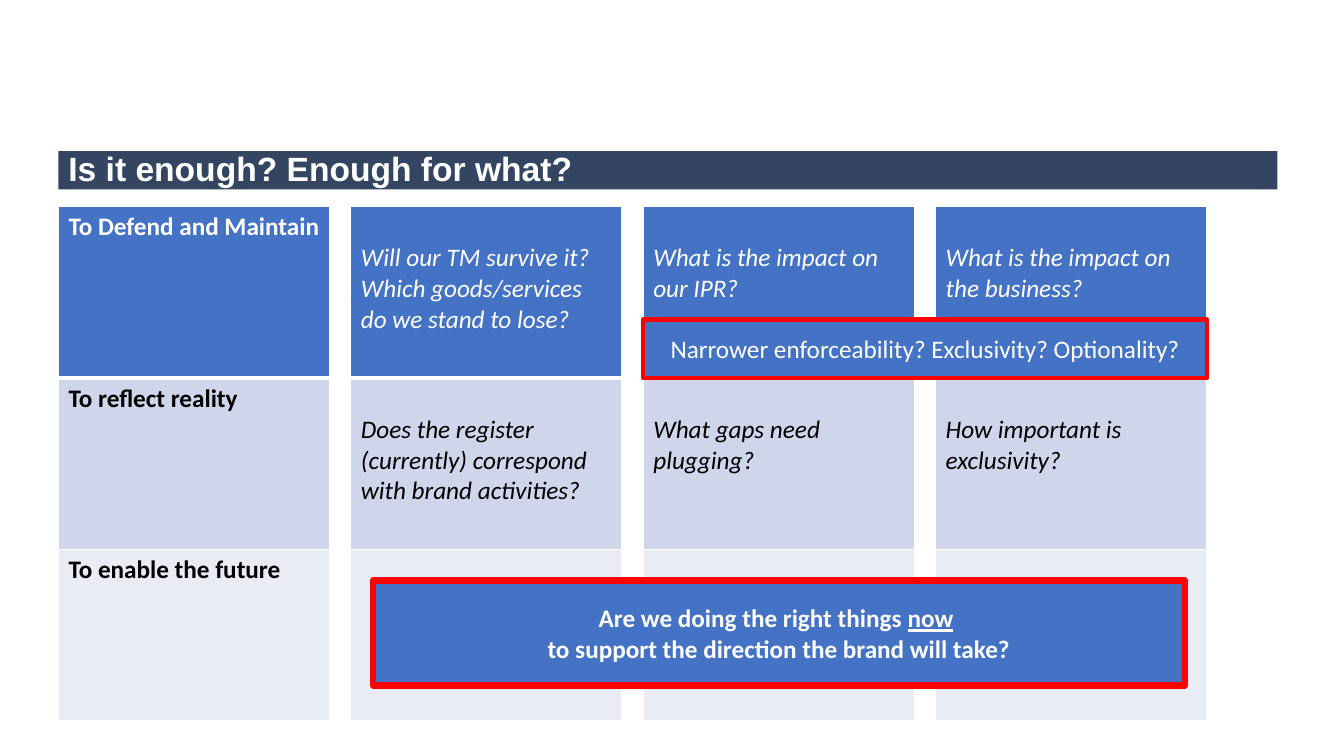
from lxml import etree
from pptx import Presentation
from pptx.dml.color import RGBColor
from pptx.enum.shapes import MSO_SHAPE
from pptx.enum.text import MSO_ANCHOR, PP_ALIGN
from pptx.oxml.ns import qn
from pptx.util import Inches, Pt

RECTANGLE = MSO_SHAPE.RECTANGLE
MIDDLE = MSO_ANCHOR.MIDDLE
LEFT, CENTER = PP_ALIGN.LEFT, PP_ALIGN.CENTER

COLORS = {
    "navy": "344561",
    "blue": "4472C4",
    "mid": "CFD5EA",
    "pale": "E9EBF5",
    "red": "FF0000",
    "white": "FFFFFF",
    "black": "000000",
}
GRID_LEFT, GRID_TOP = 0.58, 2.05
COLUMN_WIDTH, COLUMN_PITCH, ROW_HEIGHT = 2.69, 2.9, 1.7
ROW_FILLS = ["blue", "mid", "pale"]
ROW_INKS = ["white", "black", "black"]
ROW_EDGES = [1, 3, 1, 1]
QUESTION_INSET = 0.36

PURPOSES = ["To Defend and Maintain", "To reflect reality", "To enable the future"]
QUESTIONS = [
    ["Will our TM survive it?\nWhich goods/services do we stand to lose?",
     "Does the register (currently) correspond with brand activities?", ""],
    ["What is the impact on our IPR?", "What gaps need plugging?", ""],
    ["What is the impact on the business?", "How important is exclusivity?", ""],
]


def rgb(name):
    return RGBColor.from_string(COLORS[name])


def column_left(column):
    return GRID_LEFT + column * COLUMN_PITCH


def style_font(font, ink, size=18, name="Calibri", bold=False, italic=False):
    font.name, font.size = name, Pt(size)
    font.bold, font.italic = bold, italic
    font.color.rgb = rgb(ink)


def add_border(cell, side, width):
    line = etree.SubElement(cell._tc.get_or_add_tcPr(), qn(f"a:ln{side}"), w=str(Pt(width)))
    fill = etree.SubElement(line, qn("a:solidFill"))
    etree.SubElement(fill, qn("a:srgbClr"), val=COLORS["white"])


def add_column(page, column, texts, **emphasis):
    frame = page.shapes.add_table(
        len(texts), 1, Inches(column_left(column)), Inches(GRID_TOP),
        Inches(COLUMN_WIDTH), Inches(ROW_HEIGHT * len(texts)))
    table = frame.table
    table.first_row = table.horz_banding = False
    for row, text in enumerate(texts):
        cell = table.cell(row, 0)
        cell.text_frame.text = text
        if column:
            cell.margin_top = Inches(QUESTION_INSET)
        for para in cell.text_frame.paragraphs:
            for span in para.runs:
                style_font(span.font, ROW_INKS[row], **emphasis)
        edges = {"L": 1, "R": 1, "T": ROW_EDGES[row], "B": ROW_EDGES[row + 1]}
        for side, width in edges.items():
            add_border(cell, side, width)
        cell.fill.solid()
        cell.fill.fore_color.rgb = rgb(ROW_FILLS[row])


def add_box(page, bounds, fill, lines, align=CENTER, border=0, spacing=None, **look):
    box = page.shapes.add_shape(RECTANGLE, *(Inches(length) for length in bounds))
    box.shadow.inherit = False
    box.fill.solid()
    box.fill.fore_color.rgb = rgb(fill)
    if border:
        box.line.color.rgb = rgb("red")
        box.line.width = Pt(border)
    else:
        box.line.fill.background()
    frame = box.text_frame
    frame.word_wrap = True
    frame.vertical_anchor = MIDDLE
    for index, pieces in enumerate(lines):
        para = frame.add_paragraph() if index else frame.paragraphs[0]
        para.alignment = align
        para.line_spacing = spacing
        for piece in pieces:
            span = para.add_run()
            span.text = piece
            style_font(span.font, "white", **look)
    return box


def main():
    deck = Presentation()
    deck.slide_width, deck.slide_height = Inches(13.33), Inches(7.5)
    page = deck.slides.add_slide(deck.slide_layouts[6])

    add_box(page, (GRID_LEFT, 1.5, 12.09, 0.38), "navy",
            [["Is it enough? Enough for what?"]], align=LEFT, spacing=0.9,
            size=24, name="Arial", bold=True)
    add_column(page, 0, PURPOSES, bold=True)
    for column, texts in enumerate(QUESTIONS, start=1):
        add_column(page, column, texts, italic=True)

    add_box(page, (column_left(2), 3.17, COLUMN_PITCH + COLUMN_WIDTH, 0.58), "blue",
            [["Narrower enforceability? Exclusivity? Optionality?"]], border=3)
    future = add_box(page, (3.7, 5.76, 8.05, 1.04), "blue",
                     [["Are we doing the right things ", "now", " "],
                      ["to support the direction the brand will take?"]],
                     border=4.5, bold=True)
    future.text_frame.paragraphs[0].runs[1].font.underline = True

    deck.save("out.pptx")


if __name__ == "__main__":
    main()
